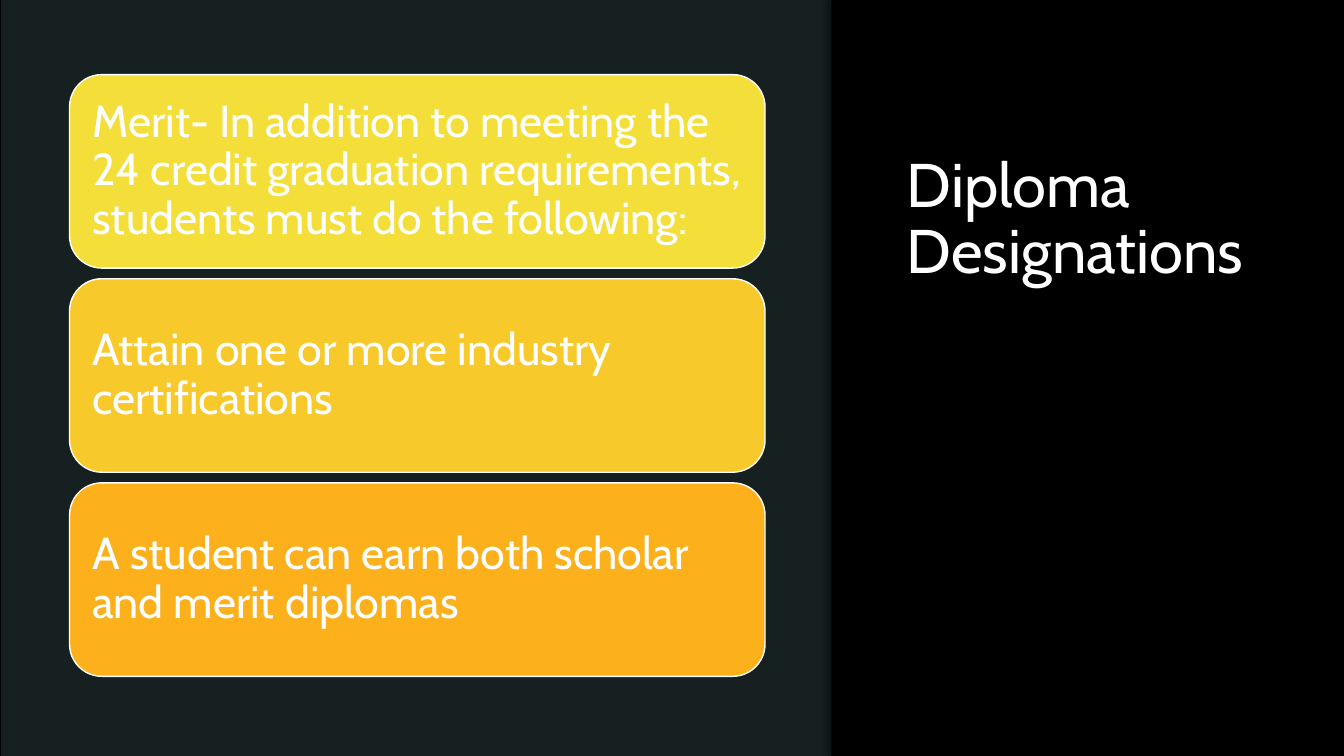
from lxml import etree
from pptx import Presentation
from pptx.dml import color
from pptx.enum import shapes, text
from pptx.oxml import ns
from pptx.util import Pt

COLORS = {
    "background": "000000",
    "tint": "94D7E4",
    "white": "FFFFFF",
    "yellow": "F4DE3A",
    "gold": "F8C92B",
    "orange": "FCB11C",
}
CARDS = [
    ("yellow", "Merit- In addition to meeting the 24 credit graduation requirements, "
               "students must do the following:"),
    ("gold", "Attain one or more industry certifications"),
    ("orange", "A student can earn both scholar and merit diplomas"),
]
SLIDE_WIDTH, SLIDE_HEIGHT = 960, 540
SPLIT = 594
CARD_LEFT, CARD_TOP = 49.7, 53.3
CARD_WIDTH, CARD_HEIGHT, CARD_PITCH = 496.8, 138.2, 145.8


class SlideBuilder:
    font = "Cabin"
    line_spacing = 0.9

    def __init__(self, page):
        self.page = page

    def color(self, name):
        return color.RGBColor.from_string(COLORS[name])

    def background(self, name):
        fill = self.page.background.fill
        fill.solid()
        fill.fore_color.rgb = self.color(name)

    def shape(self, kind, bounds, fill):
        shape = self.page.shapes.add_shape(kind, *map(Pt, bounds))
        shape.shadow.inherit = False
        shape.fill.solid()
        shape.fill.fore_color.rgb = self.color(fill)
        shape.line.fill.background()
        return shape

    def panel(self, bounds, fill):
        return self.shape(shapes.MSO_SHAPE.RECTANGLE, bounds, fill)

    def opacity(self, shape, percent):
        tone = shape._element.spPr.find(ns.qn("a:solidFill")).find(ns.qn("a:srgbClr"))
        etree.SubElement(tone, ns.qn("a:alpha"), val=str(percent * 1000))

    def left_shadow(self, shape, name, percent, blur, distance):
        effects = shape._element.spPr.find(ns.qn("a:effectLst"))
        shadow = etree.SubElement(
            effects, ns.qn("a:outerShdw"), blurRad=str(int(Pt(blur))),
            dist=str(int(Pt(distance))), dir="10800000", rotWithShape="0")
        tone = etree.SubElement(shadow, ns.qn("a:srgbClr"), val=COLORS[name])
        etree.SubElement(tone, ns.qn("a:alpha"), val=str(percent * 1000))

    def set_words(self, box, words, size):
        frame = box.text_frame
        frame.word_wrap = True
        frame.text = words
        para = frame.paragraphs[0]
        para.alignment = text.PP_ALIGN.LEFT
        para.line_spacing = self.line_spacing
        span = para.runs[0]
        span.font.name = self.font
        span.font.size = Pt(size)
        span.font.color.rgb = self.color("white")
        return frame

    def title(self, bounds, words):
        box = self.page.shapes.add_textbox(*map(Pt, bounds))
        self.set_words(box, words, 44)

    def card(self, bounds, fill, words):
        box = self.shape(shapes.MSO_SHAPE.ROUNDED_RECTANGLE, bounds, fill)
        box.line.color.rgb = self.color("white")
        box.line.width = Pt(1)
        frame = self.set_words(box, words, 32)
        frame.vertical_anchor = text.MSO_ANCHOR.MIDDLE
        frame.margin_left = frame.margin_right = Pt(9.6)
        frame.margin_top = frame.margin_bottom = Pt(9.6)


def main():
    deck = Presentation()
    deck.slide_width, deck.slide_height = Pt(SLIDE_WIDTH), Pt(SLIDE_HEIGHT)
    builder = SlideBuilder(deck.slides.add_slide(deck.slide_layouts[6]))

    builder.background("background")
    tinted = builder.panel((0.7, 0, SPLIT - 0.7, SLIDE_HEIGHT), "tint")
    builder.opacity(tinted, 15)
    sidebar = builder.panel((SPLIT, 0, SLIDE_WIDTH - SPLIT, SLIDE_HEIGHT), "background")
    builder.left_shadow(sidebar, "background", 40, 4, 3)
    builder.title((640.8, 106.6, 269.3, 380.2), "Diploma Designations")

    for index, (fill, words) in enumerate(CARDS):
        top = CARD_TOP + index * CARD_PITCH
        builder.card((CARD_LEFT, top, CARD_WIDTH, CARD_HEIGHT), fill, words)

    deck.save("out.pptx")


if __name__ == "__main__":
    main()
